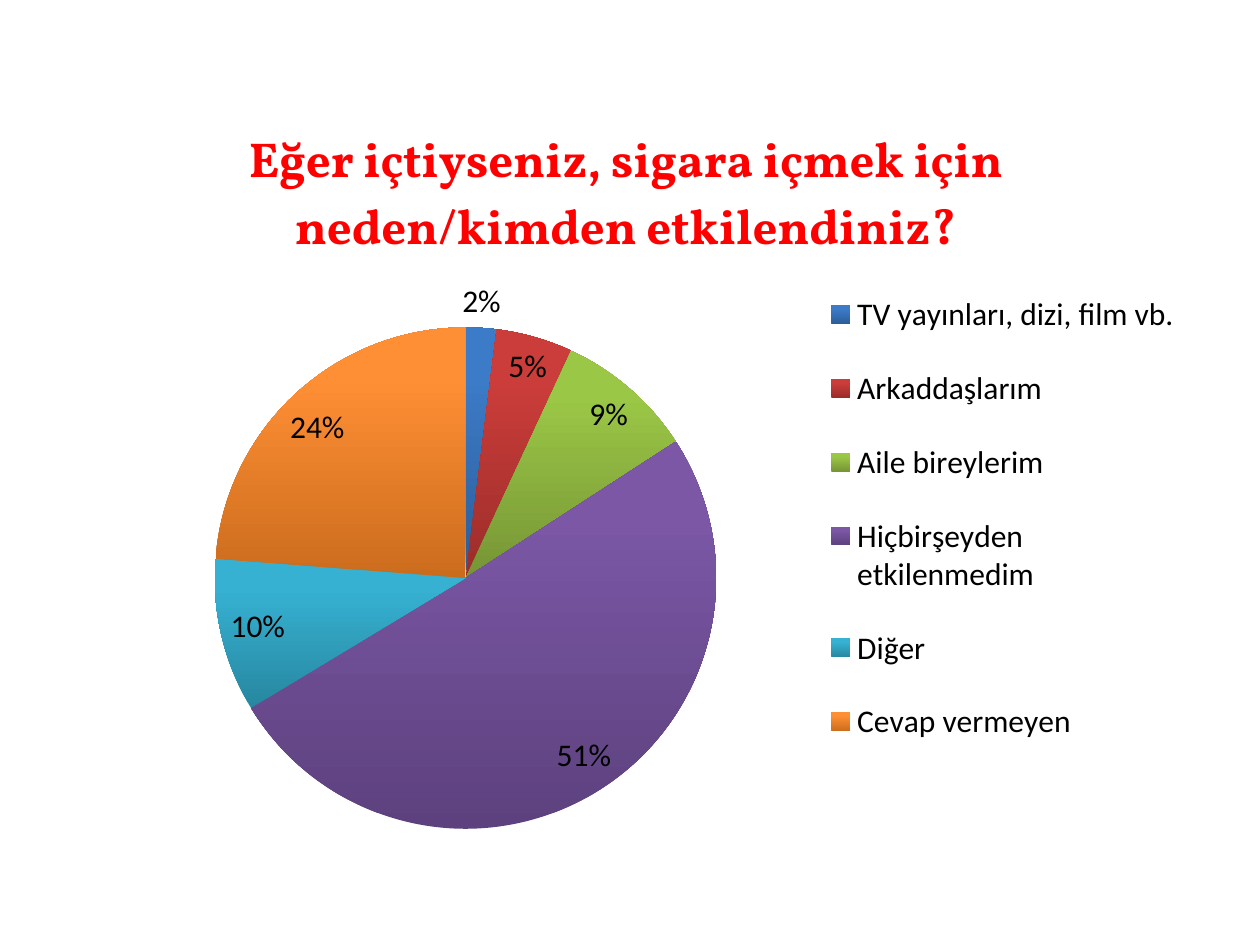
from lxml import etree
from pptx import Presentation
from pptx.chart.data import CategoryChartData
from pptx.dml.color import RGBColor
from pptx.enum.chart import XL_CHART_TYPE, XL_LABEL_POSITION, XL_LEGEND_POSITION
from pptx.oxml.ns import qn
from pptx.util import Inches, Pt

PIE = XL_CHART_TYPE.PIE
BEST_FIT = XL_LABEL_POSITION.BEST_FIT
RIGHT = XL_LEGEND_POSITION.RIGHT

BLACK = RGBColor(0x00, 0x00, 0x00)
RED = RGBColor(0xFF, 0x00, 0x00)

# Each answer: label, percentage, dark and light gradient colours
ANSWERS = [
    ("TV yayınları, dizi, film vb.", 2, RGBColor(0x2C, 0x5D, 0x98), RGBColor(0x3C, 0x7B, 0xC7)),
    ("Arkaddaşlarım", 5, RGBColor(0x9B, 0x2D, 0x2A), RGBColor(0xCB, 0x3D, 0x3A)),
    ("Aile bireylerim", 9, RGBColor(0x76, 0x95, 0x35), RGBColor(0x9B, 0xC7, 0x46)),
    ("Hiçbirşeyden etkilenmedim", 51, RGBColor(0x5D, 0x41, 0x7E), RGBColor(0x7B, 0x57, 0xA5)),
    ("Diğer", 10, RGBColor(0x27, 0x87, 0xA0), RGBColor(0x36, 0xB1, 0xD2)),
    ("Cevap vermeyen", 24, RGBColor(0xCB, 0x6C, 0x1D), RGBColor(0xFF, 0x8F, 0x35)),
]


class SurveySlide:
    """Holds the style and the current slide."""

    body_font, body_size = "Calibri", Pt(18)
    title_font, title_size = "Vollkorn", Pt(28)

    def __init__(self, presentation):
        self.width = presentation.slide_width
        self.height = presentation.slide_height
        self.slide = presentation.slides.add_slide(presentation.slide_layouts[6])

    def style(self, font, name, size, color):
        font.name, font.size, font.color.rgb = name, size, color

    def add_pie(self, answers, left, top, width, height):
        """Add a pie; lengths are shares of the slide's size."""
        data = CategoryChartData(number_format='0"%"')
        data.categories = [answer[0] for answer in answers]
        data.add_series("Series 1", [answer[1] for answer in answers])
        chart = self.slide.shapes.add_chart(
            PIE, int(left * self.width), int(top * self.height),
            int(width * self.width), int(height * self.height), data).chart
        self.style(chart.font, self.body_font, self.body_size, BLACK)

        # Slices fade from dark at the bottom to light at the top
        plot = chart.plots[0]
        plot.vary_by_categories = True
        for index, (_, _, dark, light) in enumerate(answers):
            fill = plot.series[0].points[index].format.fill
            fill.gradient()
            fill.gradient_angle = 90
            for stop, color, position in zip(fill.gradient_stops, (dark, light), (0, 0.8)):
                stop.color.rgb, stop.position = color, position

        # Percentage labels
        plot.has_data_labels = True
        labels = plot.data_labels
        labels.show_value = True
        labels.position = BEST_FIT
        self.style(labels.font, self.body_font, self.body_size, BLACK)
        return chart

    def add_title(self, chart, text):
        chart.has_title = True
        run = chart.chart_title.text_frame.paragraphs[0].add_run()
        run.text = text
        run.font.bold = True
        self.style(run.font, self.title_font, self.title_size, RED)

    def add_legend(self, chart):
        chart.has_legend = True
        chart.legend.position = RIGHT
        chart.legend.include_in_layout = False
        self.style(chart.legend.font, self.body_font, self.body_size, BLACK)

    def place(self, element, before, inner=False, **shares):
        """Fix a chart part's place by shares of the chart's size."""
        for old in element.findall(qn("c:layout")):
            element.remove(old)
        layout = etree.Element(qn("c:layout"))
        manual = etree.SubElement(layout, qn("c:manualLayout"))
        if inner:
            etree.SubElement(manual, qn("c:layoutTarget"), val="inner")
        for name in ("xMode", "yMode"):
            etree.SubElement(manual, qn("c:" + name), val="edge")
        for name, share in shares.items():
            etree.SubElement(manual, qn("c:" + name), val=str(share))
        element.find(qn(before)).addprevious(layout)


def main():
    presentation = Presentation()
    presentation.slide_width, presentation.slide_height = Inches(10), Inches(7.5)
    survey = SurveySlide(presentation)

    # Chart with its title and legend
    chart = survey.add_pie(ANSWERS, left=0.043, top=0.101, width=0.907, height=0.792)
    survey.add_title(chart, "Eğer içtiyseniz, sigara içmek için neden/kimden etkilendiniz?")
    survey.add_legend(chart)

    # Pie on the left, legend on the right
    plot_area = chart.plots[0]._element.getparent()
    survey.place(plot_area, "c:pieChart", inner=True, x=0.14, y=0.31, w=0.44, h=0.67)
    survey.place(chart.legend._element, "c:overlay", x=0.67, y=0.22, w=0.32, h=0.69)

    presentation.save("out.pptx")


if __name__ == "__main__":
    main()
